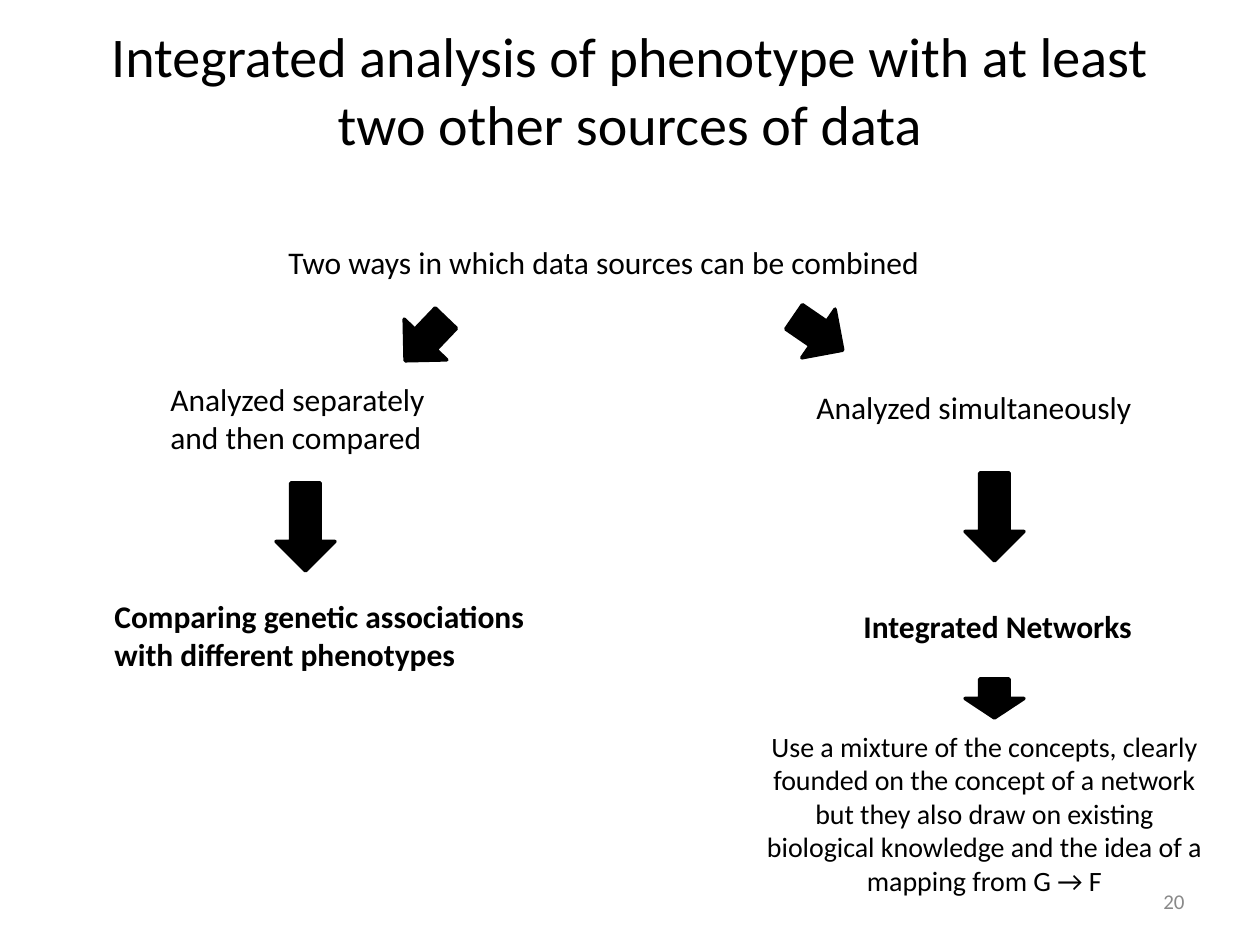
from pptx import Presentation
from pptx.dml.color import RGBColor
from pptx.enum.shapes import MSO_SHAPE
from pptx.enum.text import MSO_ANCHOR as ANCHOR, MSO_AUTO_SIZE as AUTO, PP_ALIGN as ALIGN
from pptx.util import Emu, Pt

EMU_PER_PX = 914400 / 126
COLORS = {"ink": "000000", "muted": "898989"}
FONT = "Calibri"
INDENT = 63

# Headings: box in px, text, size, alignment, colour
HEADINGS = [
    ((63, 10, 1134, 158),
     "Integrated analysis of phenotype with at least two other sources of data",
     32, ALIGN.CENTER, "ink"),
    ((903, 876, 294, 50), "20", 12, ALIGN.RIGHT, "muted"),
]

# Plain labels: box in px, paragraphs, size, alignment, wrap
LABELS = [
    ((276, 237, 728, 50), ["Two ways in which data sources can be combined"],
     18, ALIGN.LEFT, True),
    ((158, 374, 315, 89), ["Analyzed separately", "and then compared"],
     18, ALIGN.LEFT, True),
    ((804, 382, 352, 50), ["Analyzed simultaneously"], 18, ALIGN.LEFT, False),
    ((748, 723, 473, 183),
     ["Use a mixture of the concepts, clearly founded on the concept of a network "
      "but they also draw on existing biological knowledge and the idea of a "
      "mapping from G → F"], 16, ALIGN.CENTER, True),
]

# Bold, indented outcomes: box in px, text, wrap
OUTCOMES = [
    ((39, 591, 512, 89), "Comparing genetic associations with different phenotypes", True),
    ((788, 601, 359, 50), "Integrated Networks", False),
]

# Down arrows: left, top, height in px, rotation in degrees
ARROW_WIDTH = 59
ARROWS = [
    (396, 310, 59, 43.7),
    (789, 304, 59, 304.4),
    (276, 483, 88, 0),
    (965, 473, 88, 0),
    (965, 679, 39, 0),
]


def px(value):
    return Emu(round(value * EMU_PER_PX))


def color(name):
    return RGBColor.from_string(COLORS[name])


def add_text(page, place, paragraphs, size, align=ALIGN.LEFT, ink="ink",
             anchor=ANCHOR.TOP, wrap=True, grow=True, bold=False, indent=0):
    box = page.shapes.add_textbox(*map(px, place))
    frame = box.text_frame
    frame.word_wrap = wrap
    frame.auto_size = AUTO.SHAPE_TO_FIT_TEXT if grow else AUTO.NONE
    frame.vertical_anchor = anchor
    for index, text in enumerate(paragraphs):
        para = frame.add_paragraph() if index else frame.paragraphs[0]
        para.alignment = align
        if indent:
            para.level = 1
            props = para._p.get_or_add_pPr()
            props.set("marL", str(px(indent)))
            props.set("indent", "0")
        span = para.add_run()
        span.text = text
        font = span.font
        font.name, font.size, font.bold = FONT, Pt(size), bold
        font.color.rgb = color(ink)


def add_arrow(page, left, top, height, rotation):
    arrow = page.shapes.add_shape(
        MSO_SHAPE.DOWN_ARROW, *map(px, (left, top, ARROW_WIDTH, height)))
    arrow.rotation = rotation
    arrow.shadow.inherit = False
    arrow.fill.solid()
    arrow.fill.fore_color.rgb = color("ink")
    arrow.line.color.rgb = color("ink")
    arrow.line.width = Pt(2)


def main():
    deck = Presentation()
    deck.slide_width, deck.slide_height = px(1260), px(945)
    page = deck.slides.add_slide(deck.slide_layouts[6])

    # Title and slide number
    for place, text, size, align, ink in HEADINGS:
        add_text(page, place, [text], size, align, ink,
                 anchor=ANCHOR.MIDDLE, grow=False)

    # The two branches
    for place, paragraphs, size, align, wrap in LABELS:
        add_text(page, place, paragraphs, size, align, wrap=wrap)
    for place, text, wrap in OUTCOMES:
        add_text(page, place, [text], 18, wrap=wrap, bold=True, indent=INDENT)

    # Arrows between the steps
    for arrow in ARROWS:
        add_arrow(page, *arrow)

    deck.save("out.pptx")


if __name__ == "__main__":
    main()
